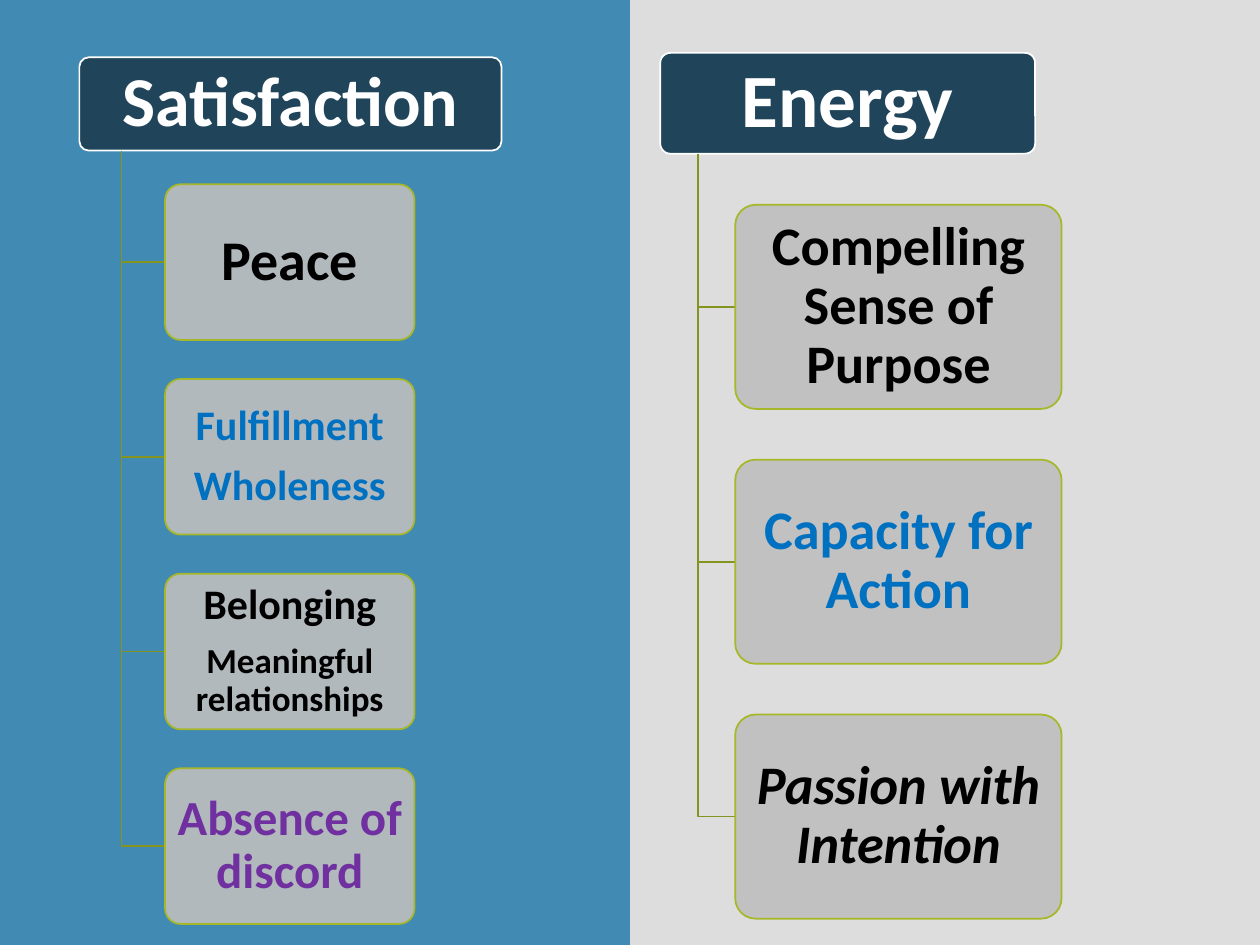
"""Build a slide with two hierarchy lists, Satisfaction and Energy."""
from lxml import etree
from pptx import Presentation
from pptx import util as u
from pptx.dml.color import RGBColor
from pptx.enum import shapes, text
from pptx.oxml import ns

HUES = {"back": "DDDDDD", "panel": "418AB3", "head": "20455A",
        "card": "BFBFBF", "rim": "A6B727", "stem": "85931F",
        "white": "FFFFFF", "black": "000000", "blue": "0070C0",
        "plum": "7030A0"}
COLS, ROWS = 100, 75


class Deck:
    """Hold the style and the current slide, on a 100 by 75 grid."""

    def __init__(self):
        """Open a blank slide with its background."""
        self.prs = Presentation()
        self.prs.slide_width, self.prs.slide_height = u.Inches(10), u.Inches(7.5)
        self.font = "Calibri"
        self.slide = self.prs.slides.add_slide(self.prs.slide_layouts[6])
        self.paint(self.slide.background.fill, "back")

    def x(self, col):
        """Turn columns into a length."""
        return round(self.prs.slide_width * col / COLS)

    def y(self, row):
        """Turn rows into a length."""
        return round(self.prs.slide_height * row / ROWS)

    def paint(self, fill, hue):
        """Set a solid fill."""
        fill.solid()
        fill.fore_color.rgb = RGBColor.from_string(HUES[hue])

    def fade(self, shape, alpha):
        """Set the opacity of a solid fill in percent."""
        clr = shape.element.spPr.find(ns.qn("a:solidFill"))[0]
        etree.SubElement(clr, ns.qn("a:alpha")).set("val", str(alpha * 1000))

    def edge(self, shape, hue):
        """Give a shape a thin line and no shadow."""
        self.paint(shape.line.fill, hue)
        shape.line.width = u.Pt(1)
        shape.shadow.inherit = False

    def block(self, kind, area, hue):
        """Add a filled preset shape."""
        col, row, wide, high = area
        box = self.slide.shapes.add_shape(
            kind, self.x(col), self.y(row), self.x(wide), self.y(high))
        self.paint(box.fill, hue)
        return box

    def panel(self, area, hue):
        """Add a plain rectangle."""
        box = self.block(shapes.MSO_SHAPE.RECTANGLE, area, hue)
        box.line.fill.background()
        box.shadow.inherit = False

    def card(self, area, lines, hue, rim, alpha=100):
        """Add a rounded box with centred bold lines."""
        box = self.block(shapes.MSO_SHAPE.ROUNDED_RECTANGLE, area, hue)
        box.adjustments[0] = 0.1
        if alpha < 100:
            self.fade(box, alpha)
        self.edge(box, rim)
        frame = box.text_frame
        frame.word_wrap = True
        frame.vertical_anchor = text.MSO_ANCHOR.MIDDLE
        size = lines[0][1]
        frame.margin_left = frame.margin_right = u.Inches(size / 500)
        frame.margin_top = frame.margin_bottom = u.Inches(size / 750)
        for n, line in enumerate(lines):
            par = frame.add_paragraph() if n else frame.paragraphs[0]
            self.label(par, *line)

    def label(self, par, words, size, hue, slant=False):
        """Fill a paragraph with one run."""
        par.alignment = text.PP_ALIGN.CENTER
        par.line_spacing = 0.9
        par.space_after = u.Pt(round(size * 0.35, 1))
        run = par.add_run()
        run.text = words
        font = run.font
        font.name, font.size, font.bold = self.font, u.Pt(size), True
        if slant:
            font.italic = True
        self.paint(font.fill, hue)

    def stem(self, col, top, end, low):
        """Draw an open elbow from a head down to a card."""
        pen = self.slide.shapes.build_freeform(self.x(col), self.y(top))
        pen.add_line_segments(
            [(self.x(col), self.y(low)), (self.x(end), self.y(low))], close=False)
        bend = pen.convert_to_shape()
        bend.fill.background()
        self.edge(bend, "stem")

    def tree(self, head, title, first, step, cards):
        """Add a head with evenly spaced cards hung below it."""
        col, row, wide, high = head
        left, top, broad, tall = first
        self.card(head, [title], "head", "white")
        for n, lines in enumerate(cards):
            spot = top + n * step
            self.stem(col + wide / 10, row + high, left, spot + tall / 2)
            self.card((left, spot, broad, tall), lines, "card", "rim", 90)


def main():
    """Build and save the slide."""
    deck = Deck()
    deck.panel((0, 0, COLS / 2, ROWS), "panel")
    deck.tree((6.3, 4.55, 33.5, 7.4), ("Satisfaction", 40, "white"),
              (13.1, 14.63, 19.8, 12.35), 15.45,
              [[("Peace", 32, "black")],
               [("Fulfillment", 24, "blue"), ("Wholeness", 24, "blue")],
               [("Belonging", 24, "black"), ("Meaningful relationships", 20, "black")],
               [("Absence of discord", 28, "plum")]])
    deck.tree((52.4, 4.2, 29.75, 8), ("Energy", 43, "white"),
              (58.35, 16.25, 25.9, 16.2), 20.23,
              [[("Compelling Sense of Purpose", 31, "black")],
               [("Capacity for Action", 31, "blue")],
               [("Passion with Intention", 31, "black", True)]])
    deck.prs.save("out.pptx")


if __name__ == "__main__":
    main()
